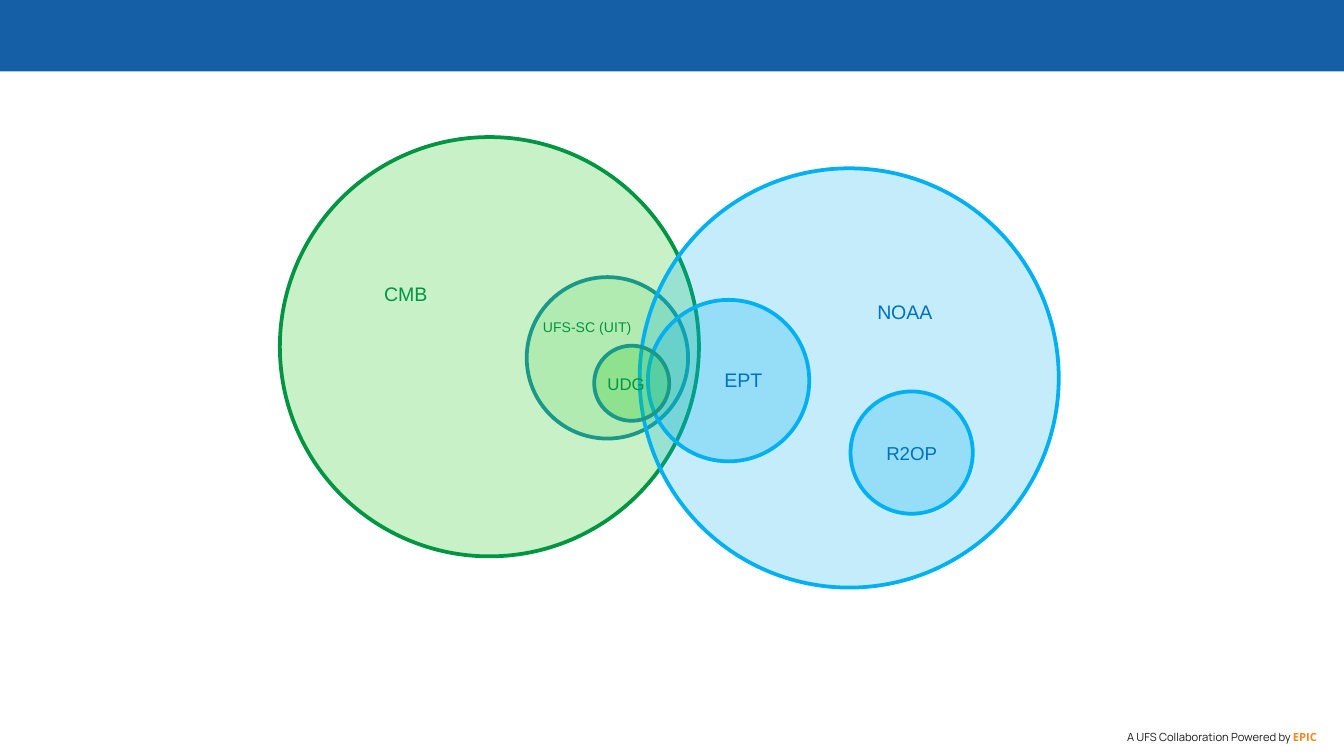
from lxml import etree
from pptx import Presentation
from pptx.dml.color import RGBColor
from pptx.enum.shapes import MSO_SHAPE
from pptx.enum.text import MSO_ANCHOR, PP_ALIGN
from pptx.oxml.ns import qn
from pptx.util import Cm, Pt

RECTANGLE, OVAL = MSO_SHAPE.RECTANGLE, MSO_SHAPE.OVAL
MIDDLE = MSO_ANCHOR.MIDDLE
LEFT, CENTER, RIGHT = PP_ALIGN.LEFT, PP_ALIGN.CENTER, PP_ALIGN.RIGHT

THEME = {
    "banner": "145FA6", "leaf": "26C926", "green": "009543", "teal": "1A9988",
    "sky": "00B0F0", "blue": "0070C0", "ink": "1A1A1A", "orange": "F68822",
    "body": "Arial", "footer": "Manrope", "accent": "Open Sans",
    "large": 10.5, "medium": 10, "small": 9, "compact": 7.5, "tiny": 6,
    "outline": 2,
}

PAGE_WIDTH, PAGE_HEIGHT = 25.4, 14.28
BANNER_HEIGHT = 1.35
LARGE_CIRCLE, TEAM_CIRCLE = 7.92, 3.05

# center x, center y, diameter, fill, opacity percent, outline, caption
CIRCLES = [
    (9.25, 6.55, LARGE_CIRCLE, "leaf", 25, "green", None),
    (11.48, 6.76, TEAM_CIRCLE, "leaf", 14, "teal", None),
    (16.05, 7.14, LARGE_CIRCLE, "sky", 23, "sky", None),
    (13.77, 7.19, TEAM_CIRCLE, "sky", 23, "sky", None),
    (17.23, 8.55, 2.31, "sky", 23, "sky", "R2OP"),
    (11.94, 7.24, 1.42, "leaf", 25, "teal", None),
]

# left, top, width, height, text, size, color
LABELS = [
    (7.01, 5.21, 1.35, 0.71, "CMB", "large", "green"),
    (16.33, 5.54, 1.57, 0.71, "NOAA", "large", "blue"),
    (13.44, 6.83, 1.24, 0.71, "EPT", "large", "blue"),
    (10.01, 5.89, 2.87, 0.58, "UFS-SC (UIT)", "compact", "green"),
    (11.23, 6.93, 1.22, 0.64, "UDG", "small", "green"),
]

# text, size, font, color, bold
FOOTER = [
    ("A UFS Collaboration Powered by ", "tiny", "footer", "ink", False),
    ("EPIC", "tiny", "accent", "orange", True),
]


def color(name):
    return RGBColor.from_string(THEME[name])


def write(frame, spans, align):
    para = frame.paragraphs[0]
    para.alignment = align
    for text, size, font, ink, bold in spans:
        span = para.add_run()
        span.text = text
        span.font.size = Pt(THEME[size])
        span.font.name = THEME[font]
        span.font.color.rgb = color(ink)
        span.font.bold = bold


def add_shape(page, kind, bounds, fill):
    shape = page.shapes.add_shape(kind, *map(Cm, bounds))
    shape.shadow.inherit = False
    shape.fill.solid()
    shape.fill.fore_color.rgb = color(fill)
    return shape


def add_circle(page, x, y, diameter, fill, opacity, outline, caption):
    bounds = (x - diameter / 2, y - diameter / 2, diameter, diameter)
    circle = add_shape(page, OVAL, bounds, fill)
    tint = circle.fill._xPr.find(qn("a:solidFill"))[0]
    etree.SubElement(tint, qn("a:alpha")).set("val", str(opacity * 1000))
    circle.line.color.rgb = color(outline)
    circle.line.width = Pt(THEME["outline"])
    if caption:
        circle.text_frame.vertical_anchor = MIDDLE
        circle.text_frame.word_wrap = False
        write(circle.text_frame, [(caption, "medium", "body", "blue", False)], CENTER)


def add_text(page, bounds, spans, align):
    box = page.shapes.add_textbox(*map(Cm, bounds))
    frame = box.text_frame
    frame.word_wrap = True
    frame.margin_right = 0
    write(frame, spans, align)
    return frame


def main():
    deck = Presentation()
    deck.slide_width, deck.slide_height = Cm(PAGE_WIDTH), Cm(PAGE_HEIGHT)
    page = deck.slides.add_slide(deck.slide_layouts[6])

    banner = add_shape(page, RECTANGLE, (0, 0, PAGE_WIDTH, BANNER_HEIGHT), "banner")
    banner.line.fill.background()

    footer = add_text(page, (19.84, 13.79, 5.05, 0.25), FOOTER, RIGHT)
    footer.margin_left = footer.margin_top = footer.margin_bottom = 0

    for circle in CIRCLES:
        add_circle(page, *circle)
    for *bounds, text, size, ink in LABELS:
        add_text(page, bounds, [(text, size, "body", ink, False)], LEFT)

    deck.save("out.pptx")


if __name__ == "__main__":
    main()
